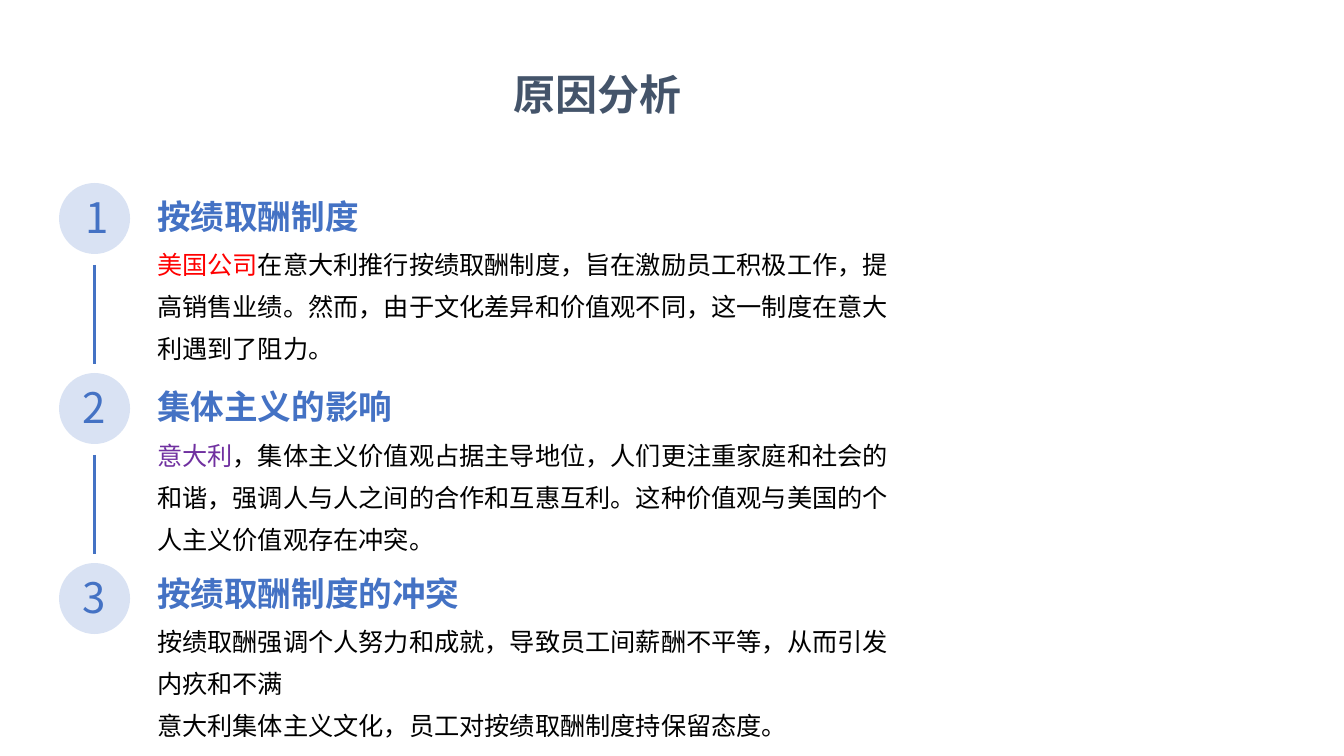
from lxml import etree
from pptx import Presentation
from pptx import util as u
from pptx.dml.color import RGBColor
from pptx.enum import shapes, text
from pptx.oxml.ns import qn

EMU_PER_PX = 914400 / 100.8
FONT = "Noto Sans CJK SC"
BLUE, SLATE, BLACK, RED, PURPLE = "4472C4", "44546A", "000000", "FF0000", "7030A0"

STEP_TOP, STEP_PITCH, CIRCLE_LEFT, CIRCLE_SIZE = 183, 190, 59, 71
TEXT_LEFT, TEXT_WIDTH = 143, 760
TITLE_INSETS = (461, 14, 6, 14)
HEADING_INSETS = (14, 14, 6, 10)
BODY_INSETS = (14, 16, 6, 14)

# Each step: number left, heading, heading top and height, body top, body paragraphs
STEPS = [
    (67, "按绩取酬制度", 161, 85, 221, [[
        ("美国公司", RED),
        ("在意大利推行按绩取酬制度，旨在激励员工积极工作，提高销售业绩。"
         "然而，由于文化差异和价值观不同，这一制度在意大利遇到了阻力。", BLACK)]]),
    (64, "集体主义的影响", 351, 85, 412, [[
        ("意大利", PURPLE),
        ("，集体主义价值观占据主导地位，人们更注重家庭和社会的和谐，"
         "强调人与人之间的合作和互惠互利。这种价值观与美国的个人主义价值观存在冲突。", BLACK)]]),
    (64, "按绩取酬制度的冲突", 542, 81, 598, [
        [("按绩取酬强调个人努力和成就，导致员工间薪酬不平等，从而引发内疚和不满", BLACK)],
        [("意大利集体主义文化，员工对按绩取酬制度持保留态度。", BLACK)]]),
]


def px(length):
    return u.Emu(round(length * EMU_PER_PX))


def color(hex_string):
    return RGBColor.from_string(hex_string)


def set_font(font, size, bold=False):
    font.name, font.size, font.bold = FONT, u.Pt(size), bold
    # East Asian text takes its typeface from a separate element
    etree.SubElement(font._element, qn("a:ea")).set("typeface", FONT)


def fill_text(box, paragraphs, size, insets, anchor, bold=False, align=None, spacing=None):
    """Write paragraphs, each a list of (wording, colour) spans."""
    frame = box.text_frame
    frame.word_wrap = True
    frame.auto_size = text.MSO_AUTO_SIZE.NONE
    frame.vertical_anchor = anchor
    (frame.margin_left, frame.margin_top,
     frame.margin_right, frame.margin_bottom) = map(px, insets)
    for index, spans in enumerate(paragraphs):
        para = frame.add_paragraph() if index else frame.paragraphs[0]
        para.alignment = align or text.PP_ALIGN.LEFT
        para.space_before = u.Pt(0)
        if spacing:
            para.line_spacing = u.Pt(spacing)
        for wording, hex_string in spans:
            span = para.add_run()
            span.text = wording
            set_font(span.font, size, bold)
            span.font.color.rgb = color(hex_string)


def add_title(page, wording):
    title = page.shapes.title
    title.left, title.top, title.width, title.height = map(px, (52, 29, 1239, 101))
    fill_text(title, [[(wording, SLATE)]], 30, TITLE_INSETS,
              text.MSO_ANCHOR.MIDDLE, bold=True, spacing=56)


def add_text(page, left, top, width, height, *args, **options):
    box = page.shapes.add_textbox(*map(px, (left, top, width, height)))
    fill_text(box, *args, **options)


def add_circle(page, top):
    circle = page.shapes.add_shape(
        shapes.MSO_SHAPE.OVAL, px(CIRCLE_LEFT), px(top), px(CIRCLE_SIZE), px(CIRCLE_SIZE))
    circle.shadow.inherit = False
    circle.line.fill.background()
    circle.fill.solid()
    circle.fill.fore_color.rgb = color(BLUE)
    tint = circle._element.spPr.find(".//" + qn("a:srgbClr"))
    etree.SubElement(tint, qn("a:alpha")).set("val", "20000")


def add_link(page, top, bottom):
    middle = px(CIRCLE_LEFT + CIRCLE_SIZE / 2)
    link = page.shapes.add_connector(
        shapes.MSO_CONNECTOR.STRAIGHT, middle, px(top), middle, px(bottom))
    link.line.color.rgb = color(BLUE)
    link.line.width = u.Pt(1.5)
    etree.SubElement(link._element.spPr, qn("a:effectLst"))


def add_step(page, index, number_left, heading, heading_top, heading_height, body_top, body):
    top = STEP_TOP + index * STEP_PITCH
    add_circle(page, top)
    add_text(page, number_left, top + 1, 60, 65, [[(str(index + 1), BLUE)]], 30,
             (10, 5, 10, 5), text.MSO_ANCHOR.MIDDLE, align=text.PP_ALIGN.CENTER)
    add_text(page, TEXT_LEFT, heading_top, TEXT_WIDTH, heading_height, [[(heading, BLUE)]],
             24, HEADING_INSETS, text.MSO_ANCHOR.BOTTOM, bold=True)
    add_text(page, TEXT_LEFT, body_top, TEXT_WIDTH, 120, body, 18, BODY_INSETS,
             text.MSO_ANCHOR.TOP, spacing=30.25)
    # A line leads on to the next step
    if index < len(STEPS) - 1:
        add_link(page, top + 82, top + 181)


def main():
    deck = Presentation()
    deck.slide_width, deck.slide_height = u.Inches(13.33), u.Inches(7.5)
    page = deck.slides.add_slide(deck.slide_layouts[5])
    add_title(page, "原因分析")
    for index, step in enumerate(STEPS):
        add_step(page, index, *step)
    deck.save("out.pptx")


if __name__ == "__main__":
    main()
